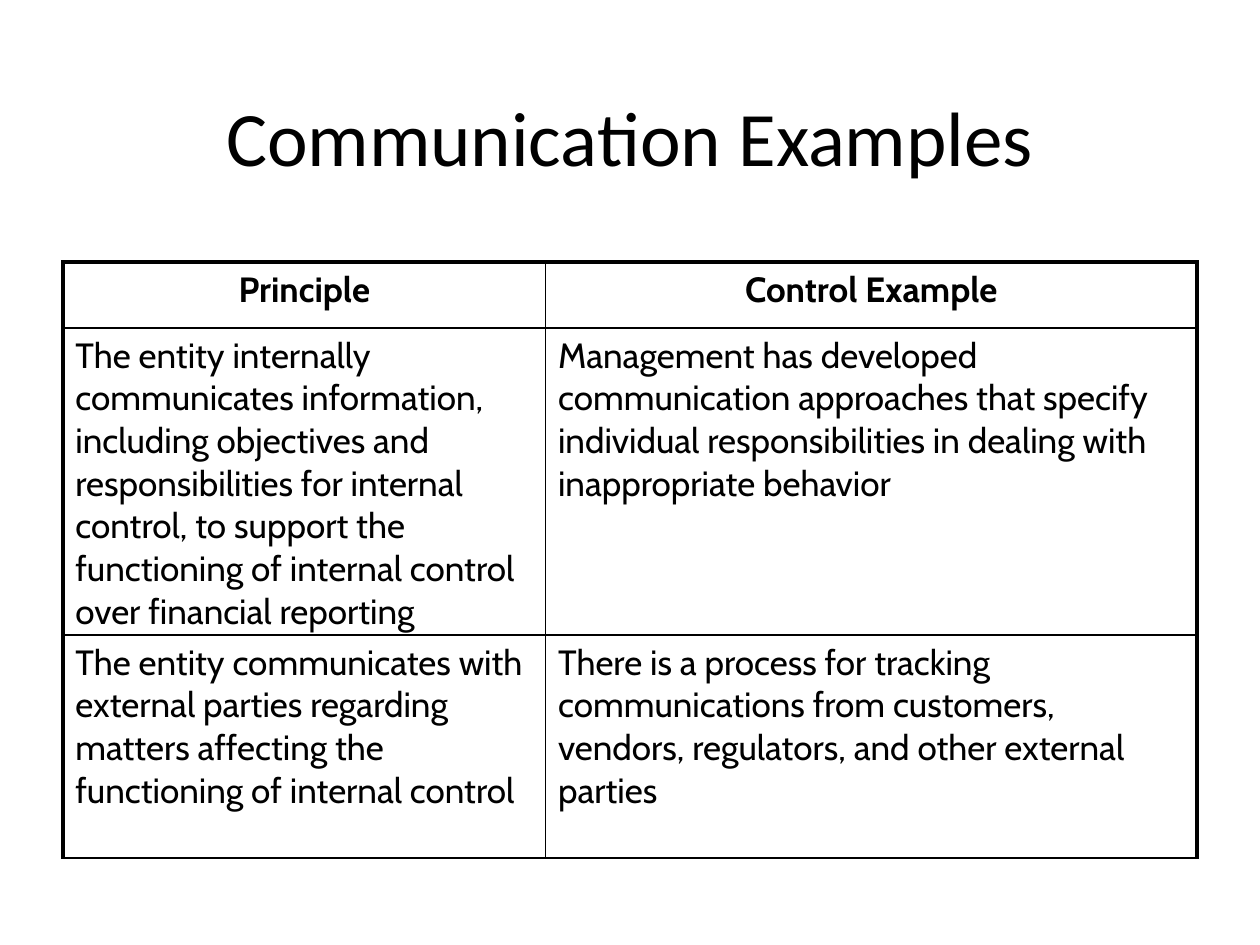
from dataclasses import dataclass

import pptx
import pptx.dml.color
import pptx.enum.text
import pptx.oxml
import pptx.oxml.ns
import pptx.util
from lxml import etree
from pptx.util import Cm


@dataclass(frozen=True)
class Theme:
    ink: str = "000000"
    paper: str = "FFFFFF"
    title_font: str = "Calibri"
    table_font: str = "Cabin"
    title_size: float = 44
    table_size: float = 20
    frame_width: float = 2.25
    grid_width: float = 1


theme = Theme()


def style_paragraph(para, font, size, bold, centred):
    align = pptx.enum.text.PP_ALIGN
    para.alignment = align.CENTER if centred else align.LEFT
    for span in para.runs:
        span.font.name = font
        span.font.size = pptx.util.Pt(size)
        span.font.bold = bold
        span.font.color.rgb = pptx.dml.color.RGBColor.from_string(theme.ink)


def add_border(cell, side, width):
    """Draw one cell edge; side is L, R, T or B and width is in points."""
    name = pptx.oxml.ns.qn
    properties = cell._tc.get_or_add_tcPr()
    line = etree.SubElement(properties, name(f"a:ln{side}"), w=str(pptx.util.Pt(width)))
    fill = etree.SubElement(line, name("a:solidFill"))
    etree.SubElement(fill, name("a:srgbClr"), val=theme.ink)


deck = pptx.Presentation()
deck.slide_width = Cm(25.4)
deck.slide_height = Cm(19.05)
slide = deck.slides.add_slide(deck.slide_layouts[6])

# Title
title = slide.shapes.add_textbox(Cm(1.27), Cm(0.81), Cm(22.86), Cm(3.84))
frame = title.text_frame
frame.word_wrap = True
frame.vertical_anchor = pptx.enum.text.MSO_ANCHOR.MIDDLE
frame.text = "Communication Examples"
style_paragraph(frame.paragraphs[0], theme.title_font, theme.title_size, False, True)

# Table of principles and matching controls
rows = [
    ("Principle", "Control Example"),
    (
        "The entity internally communicates information, including objectives and "
        "responsibilities for internal control, to support the functioning of "
        "internal control over financial reporting",
        "Management has developed communication approaches that specify individual "
        "responsibilities in dealing with inappropriate behavior",
    ),
    (
        "The entity communicates with external parties regarding matters affecting "
        "the functioning of internal control",
        "There is a process for tracking communications from customers, vendors, "
        "regulators, and other external parties",
    ),
]
column_widths = [9.73, 13.13]
row_heights = [1.33, 6.17, 4.5]

table = slide.shapes.add_table(
    len(rows), len(column_widths), Cm(1.27), Cm(5.28),
    Cm(sum(column_widths)), Cm(sum(row_heights)),
).table
for column, width in zip(table.columns, column_widths):
    column.width = Cm(width)
for row, height in zip(table.rows, row_heights):
    row.height = Cm(height)

for row_index, texts in enumerate(rows):
    is_header = row_index == 0
    for column_index, text in enumerate(texts):
        cell = table.cell(row_index, column_index)
        cell.text = text
        cell.margin_left = cell.margin_right = Cm(0.25)
        cell.margin_top = cell.margin_bottom = Cm(0.13)
        style_paragraph(
            cell.text_frame.paragraphs[0],
            theme.table_font, theme.table_size, is_header, is_header,
        )
        on_frame = {
            "L": column_index == 0,
            "R": column_index == len(column_widths) - 1,
            "T": is_header,
            "B": False,
        }
        for side, framed in on_frame.items():
            add_border(cell, side, theme.frame_width if framed else theme.grid_width)
        cell.fill.solid()
        cell.fill.fore_color.rgb = pptx.dml.color.RGBColor.from_string(theme.paper)

deck.save("out.pptx")
